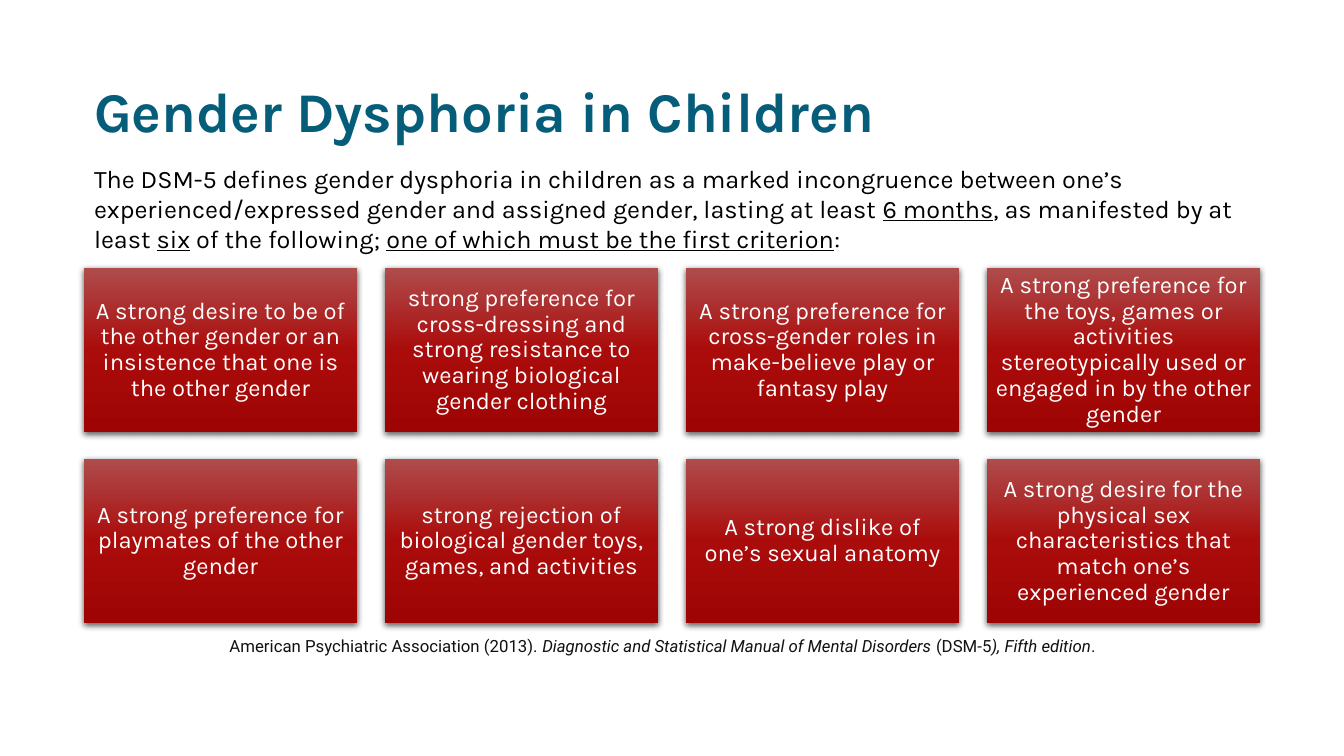
from lxml import etree
from pptx import Presentation
from pptx.dml.color import RGBColor
from pptx.enum.shapes import MSO_SHAPE as Preset
from pptx.enum.text import MSO_ANCHOR as Anchor, PP_ALIGN as Align
from pptx.oxml import parse_xml
from pptx.oxml.ns import nsdecls, qn
from pptx.util import Pt

EMU_PER_PX = 914400 / 100.8
TITLE_COLOR, BLACK, WHITE, SOURCE_COLOR = "055D7A", "000000", "FFFFFF", "111111"
CARD_STOPS = ((0, "AF4C4C"), (50, "AA0C0B"), (100, "9E0403"))

CRITERIA = (
    "A strong desire to be of the other gender or an insistence that one is the other gender",
    "strong preference for cross-dressing and strong resistance to wearing biological gender clothing",
    "A strong preference for cross-gender roles in make-believe play or fantasy play",
    "A strong preference for the toys, games or activities stereotypically used "
    "or engaged in by the other gender",
    "A strong preference for playmates of the other gender",
    "strong rejection of biological gender toys, games, and activities",
    "A strong dislike of one’s sexual anatomy",
    "A strong desire for the physical sex characteristics that match one’s experienced gender",
)
DEFINITION = (
    ("The DSM-5 defines gender dysphoria in children as a marked incongruence between one’s "
     "experienced/expressed gender and assigned gender, lasting at least ", {}),
    ("6 months", {"underline": True}),
    (", as manifested by at least ", {}),
    ("six", {"underline": True}),
    (" of the following; ", {}),
    ("one of which must be the first criterion", {"underline": True}),
    (":", {}),
)
SOURCE = (
    ("American Psychiatric Association (2013). ", {}),
    ("Diagnostic and Statistical Manual of Mental Disorders ", {"italic": True}),
    ("(DSM-5", {}),
    ("), Fifth edition", {"italic": True}),
    (".", {}),
)


def px(value):
    return round(value * EMU_PER_PX)


def rgb(color):
    return RGBColor.from_string(color)


def set_all(target, values):
    for name, value in values.items():
        setattr(target, name, value)


class SlideBuilder:
    """Holds the text style and the slide being built."""

    font = "Karla"

    def __init__(self, presentation):
        self.slide = presentation.slides.add_slide(presentation.slide_layouts[5])

    def fill_text(self, shape, runs, size, color, font=None, insets=(10, 5),
                  anchor=Anchor.TOP, **paragraph_format):
        frame = shape.text_frame
        side, top = px(insets[0]), px(insets[1])
        set_all(frame, {"word_wrap": True, "vertical_anchor": anchor,
                        "margin_left": side, "margin_right": side,
                        "margin_top": top, "margin_bottom": top})
        paragraph = frame.paragraphs[0]
        set_all(paragraph, {"alignment": Align.LEFT, "space_before": Pt(0), **paragraph_format})
        for text, extra in runs:
            run = paragraph.add_run()
            run.text = text
            set_all(run.font, {"name": font or self.font, "size": Pt(size), **extra})
            run.font.color.rgb = rgb(color)

    def title(self, box, text):
        shape = self.slide.shapes.title
        set_all(shape, dict(zip(("left", "top", "width", "height"), map(px, box))))
        self.fill_text(shape, [(text, {"bold": True})], 40, TITLE_COLOR,
                       anchor=Anchor.MIDDLE, line_spacing=0.9)

    def text(self, box, runs, size, color, **style):
        shape = self.slide.shapes.add_textbox(*map(px, box))
        self.fill_text(shape, runs, size, color, **style)

    def card(self, box, text):
        shape = self.slide.shapes.add_shape(Preset.RECTANGLE, *map(px, box))
        shape.line.fill.background()
        self.fill_gradient(shape)
        self.add_shadow(shape)
        self.fill_text(shape, [(text, {})], 17, WHITE, insets=(7, 7), anchor=Anchor.MIDDLE,
                       alignment=Align.CENTER, line_spacing=0.9)

    def fill_gradient(self, shape):
        shape.fill.gradient()
        shape.fill.gradient_angle = 270
        stops = shape._element.spPr.find(qn("a:gradFill")).find(qn("a:gsLst"))
        for stop in list(stops):
            stops.remove(stop)
        for position, color in CARD_STOPS:
            stop = etree.SubElement(stops, qn("a:gs"), pos=str(position * 1000))
            etree.SubElement(stop, qn("a:srgbClr"), val=color)

    def add_shadow(self, shape):
        shape.shadow.inherit = False
        effects = shape._element.spPr.find(qn("a:effectLst"))
        effects.append(parse_xml(
            f'<a:outerShdw {nsdecls("a")} blurRad="{Pt(4.5)}" dist="{Pt(1.5)}" dir="5400000" '
            f'rotWithShape="0"><a:srgbClr val="{BLACK}"><a:alpha val="63000"/></a:srgbClr>'
            '</a:outerShdw>'))


def main():
    presentation = Presentation()
    set_all(presentation, {"slide_width": px(1344), "slide_height": px(756)})
    builder = SlideBuilder(presentation)

    # Title and definition
    builder.title((84, 79, 1167, 71), "Gender Dysphoria in Children")
    builder.text((84, 158, 1176, 102), DEFINITION, 18, BLACK)

    # Criteria in two rows of four
    for index, criterion in enumerate(CRITERIA):
        row, column = divmod(index, 4)
        builder.card((84 + 301 * column, 268 + 191 * row, 273, 164), criterion)

    # Source line
    builder.text((65, 631, 1195, 30), SOURCE, 12, SOURCE_COLOR,
                 font="Roboto", alignment=Align.CENTER)

    presentation.save("out.pptx")


if __name__ == "__main__":
    main()
